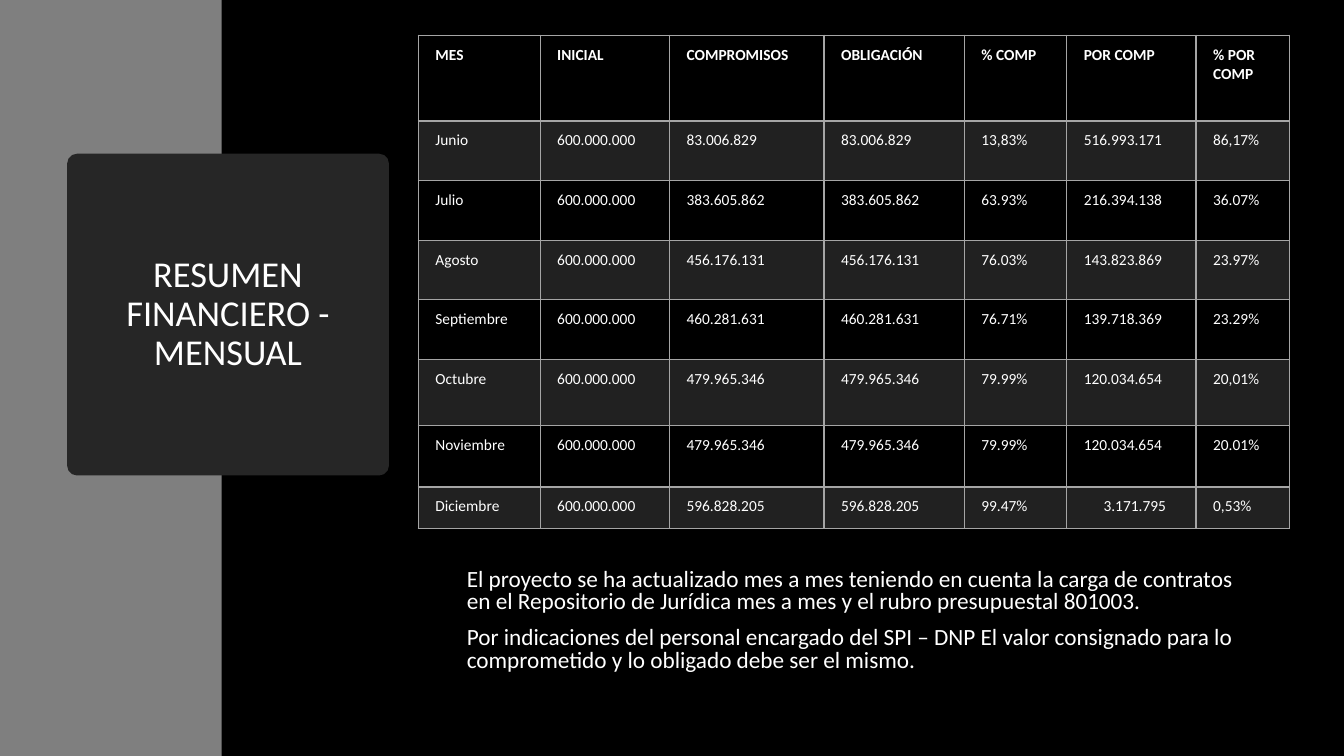
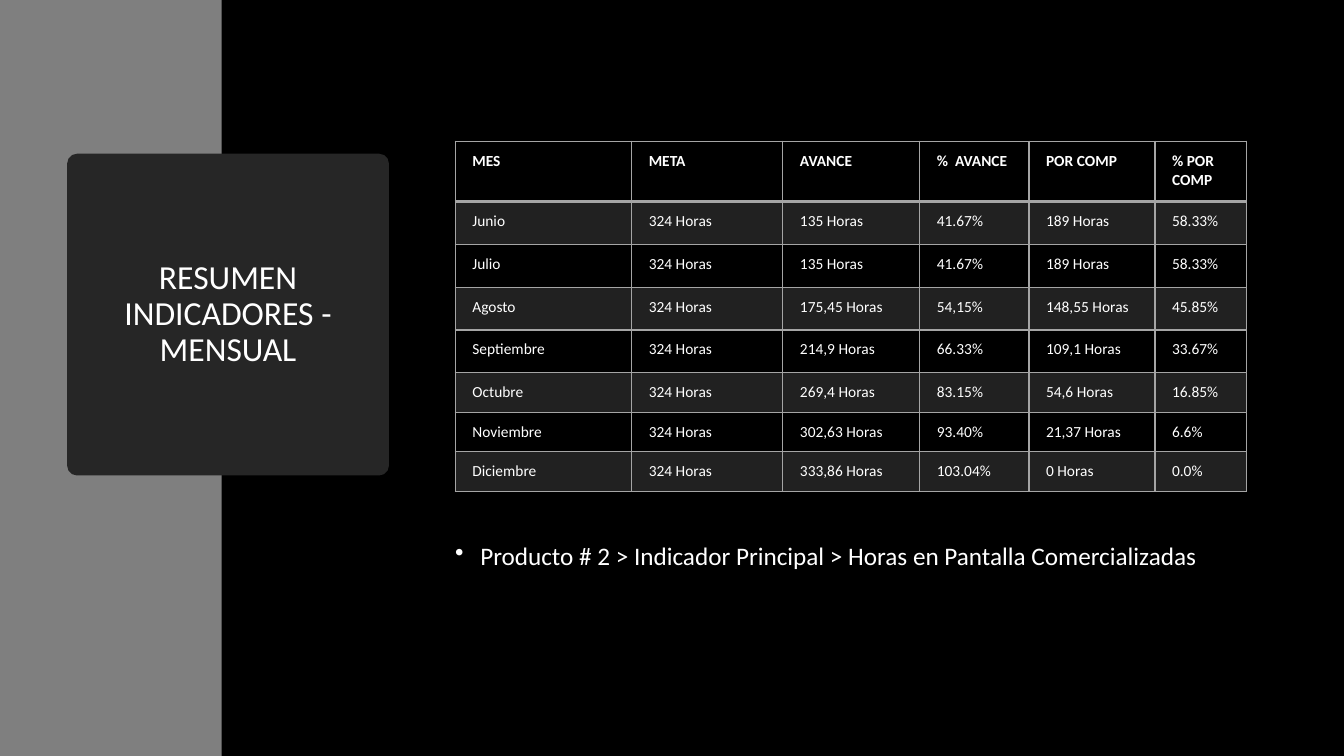
from itertools import product

from lxml.etree import SubElement as Sub
from pptx import Presentation
from pptx.dml.color import RGBColor
from pptx.enum.shapes import MSO_SHAPE as Shape
from pptx.enum.text import MSO_ANCHOR as Anchor, PP_ALIGN as Align
from pptx.oxml import parse_xml
from pptx.oxml.ns import nsdecls, qn
from pptx.util import Emu, Inches, Pt

# Shared look
FONT = "Calibri"
BLACK, WHITE, GRAY, DARK, LINE = "000000", "FFFFFF", "7F7F7F", "262626", "A5A5A5"
TINT = 20  # opacity of shaded rows, percent

# Grid of square units: 160 columns by 90 rows
COLS, ROWS = 160, 90
UNIT = Inches(7.5) // ROWS
PANEL = (8, 18.3, 38.3, 38.3)
MONTHS = ["Junio", "Julio", "Agosto", "Septiembre", "Octubre", "Noviembre", "Diciembre"]


def grid(*vals):
    return [Emu(round(v * UNIT)) for v in vals]


def paint(fill, tone):
    fill.solid()
    fill.fore_color.rgb = RGBColor.from_string(tone)


def write(frame, *texts, size=11, bold=False, align=Align.LEFT,
          space=None, before=None, bullet=False):
    """Fill a text frame, one paragraph for each text."""
    frame.word_wrap = True
    for num, text in enumerate(texts):
        para = frame.add_paragraph() if num else frame.paragraphs[0]
        para.alignment, para.line_spacing = align, space
        if before:
            para.space_before = Pt(before)
        run = para.add_run()
        run.text = text
        font = run.font
        font.name, font.size, font.bold = FONT, Pt(size), bold
        font.color.rgb = RGBColor.from_string(WHITE)
        if bullet:
            props = para._p.get_or_add_pPr()
            props.set("marL", str(Inches(0.25)))
            props.set("indent", str(-Inches(0.25)))
            Sub(props, qn("a:buChar"), char="•")


def block(slide, kind, box, tone):
    shape = slide.shapes.add_shape(kind, *grid(*box))
    shape.shadow.inherit = False
    paint(shape.fill, tone)
    shape.line.fill.background()
    return shape


def frame(deck, title, size):
    """Start a slide with its background, side band and title panel."""
    slide = deck.slides.add_slide(deck.slide_layouts[6])
    paint(slide.background.fill, BLACK)
    block(slide, Shape.RECTANGLE, (0, 0, 26.4, ROWS), GRAY)
    panel = block(slide, Shape.ROUNDED_RECTANGLE, PANEL, DARK)
    panel.adjustments[0] = 0.03
    panel.text_frame.vertical_anchor = Anchor.MIDDLE
    write(panel.text_frame, title, size=size, align=Align.CENTER, space=0.9)
    return slide


def edge(cell, top, low):
    """Draw the four borders; top and low are widths in points."""
    props = cell._tc.get_or_add_tcPr()
    sides = {"lnL": 1, "lnR": 1, "lnT": top, "lnB": low}
    for spot, (side, width) in enumerate(sides.items()):
        props.insert(spot, parse_xml(
            f'<a:{side} {nsdecls("a")} w="{Pt(width)}"><a:solidFill>'
            f'<a:srgbClr val="{LINE}"/></a:solidFill></a:{side}>'))


def shade(cell):
    paint(cell.fill, LINE)
    tone = cell._tc.tcPr.find(qn("a:solidFill")).find(qn("a:srgbClr"))
    Sub(tone, qn("a:alpha"), val=str(TINT * 1000))


def table(slide, left, top, cols, rows, head, data, mid=()):
    """Month table; mid lists the (row, column) cells to centre."""
    cells = [head] + [[month, *vals] for month, vals in zip(MONTHS, data)]
    area = grid(left, top, sum(cols), sum(rows))
    tab = slide.shapes.add_table(len(rows), len(cols), *area).table
    tab.horz_banding = tab.first_row = False
    for col, width in zip(tab.columns, grid(*cols)):
        col.width = width
    for row, high in zip(tab.rows, grid(*rows)):
        row.height = high
    for r, c in product(range(len(rows)), range(len(cols))):
        cell = tab.cell(r, c)
        cell.margin_left = Inches(0.17)
        cell.margin_top = cell.margin_right = cell.margin_bottom = Inches(0.1)
        write(cell.text_frame, cells[r][c], bold=r == 0,
              align=Align.CENTER if (r, c) in mid else Align.LEFT)
        edge(cell, 2 if r == 1 else 1, 2 if r == 0 else 1)
        if r % 2:
            shade(cell)
        else:
            cell.fill.background()


def note(slide, box, *texts, **form):
    area = slide.shapes.add_textbox(*grid(*box))
    write(area.text_frame, *texts, before=10, **form)


def money(deck):
    """Monthly budget slide."""
    slide = frame(deck, "RESUMEN FINANCIERO - MENSUAL", 26)
    head = ["MES", "INICIAL", "COMPROMISOS", "OBLIGACIÓN", "% COMP", "POR COMP", "% POR COMP"]
    # Spent, its share, left, its share
    sums = [
        ("83.006.829", "13,83%", "516.993.171", "86,17%"),
        ("383.605.862", "63.93%", "216.394.138", "36.07%"),
        ("456.176.131", "76.03%", "143.823.869", "23.97%"),
        ("460.281.631", "76.71%", "139.718.369", "23.29%"),
        ("479.965.346", "79.99%", "120.034.654", "20,01%"),
        ("479.965.346", "79.99%", "120.034.654", "20.01%"),
        ("596.828.205", "99.47%", "3.171.795", "0,53%"),
    ]
    data = [("600.000.000", spent, spent, *rest) for spent, *rest in sums]
    table(slide, 49.8, 4.2, [14.5, 15.4, 18.4, 16.7, 12.2, 15.4, 11.1],
          [10.2] + [7.1] * 4 + [7.9, 7.3, 4.9], head, data, mid=[(7, 5)])
    note(slide, (54.4, 67.2, 94.3, 17),
         "El proyecto se ha actualizado mes a mes teniendo en cuenta la carga de contratos "
         "en el Repositorio de Jurídica mes a mes y el rubro presupuestal 801003.",
         "Por indicaciones del personal encargado del SPI – DNP El valor consignado para lo "
         "comprometido y lo obligado debe ser el mismo.",
         size=16.6, space=0.8)


def goals(deck):
    """Monthly indicator slide."""
    slide = frame(deck, "RESUMEN INDICADORES - MENSUAL", 24)
    head = ["MES", "META", "AVANCE", "%  AVANCE", "POR COMP", "% POR COMP"]
    # Hours done, share, hours left, share
    hours = [
        ("135", "41.67%", "189", "58.33%"),
        ("135", "41.67%", "189", "58.33%"),
        ("175,45", "54,15%", "148,55", "45.85%"),
        ("214,9", "66.33%", "109,1", "33.67%"),
        ("269,4", "83.15%", "54,6", "16.85%"),
        ("302,63", "93.40%", "21,37", "6.6%"),
        ("333,86", "103.04%", "0", "0.0%"),
    ]
    data = [("324 Horas", f"{done} Horas", part, f"{left} Horas", rest)
            for done, part, left, rest in hours]
    table(slide, 54.2, 16.8, [21, 18, 16.3, 13, 15, 10.9],
          [7.2] + [5.1] * 4 + [4.7] * 3, head, data)
    note(slide, (53, 64.1, 94.3, 17),
         "Producto # 2 > Indicador Principal > Horas en Pantalla Comercializadas",
         size=18, space=0.9, bullet=True)


def main():
    deck = Presentation()
    deck.slide_width, deck.slide_height = grid(COLS, ROWS)
    money(deck)
    goals(deck)
    deck.save("out.pptx")


if __name__ == "__main__":
    main()
